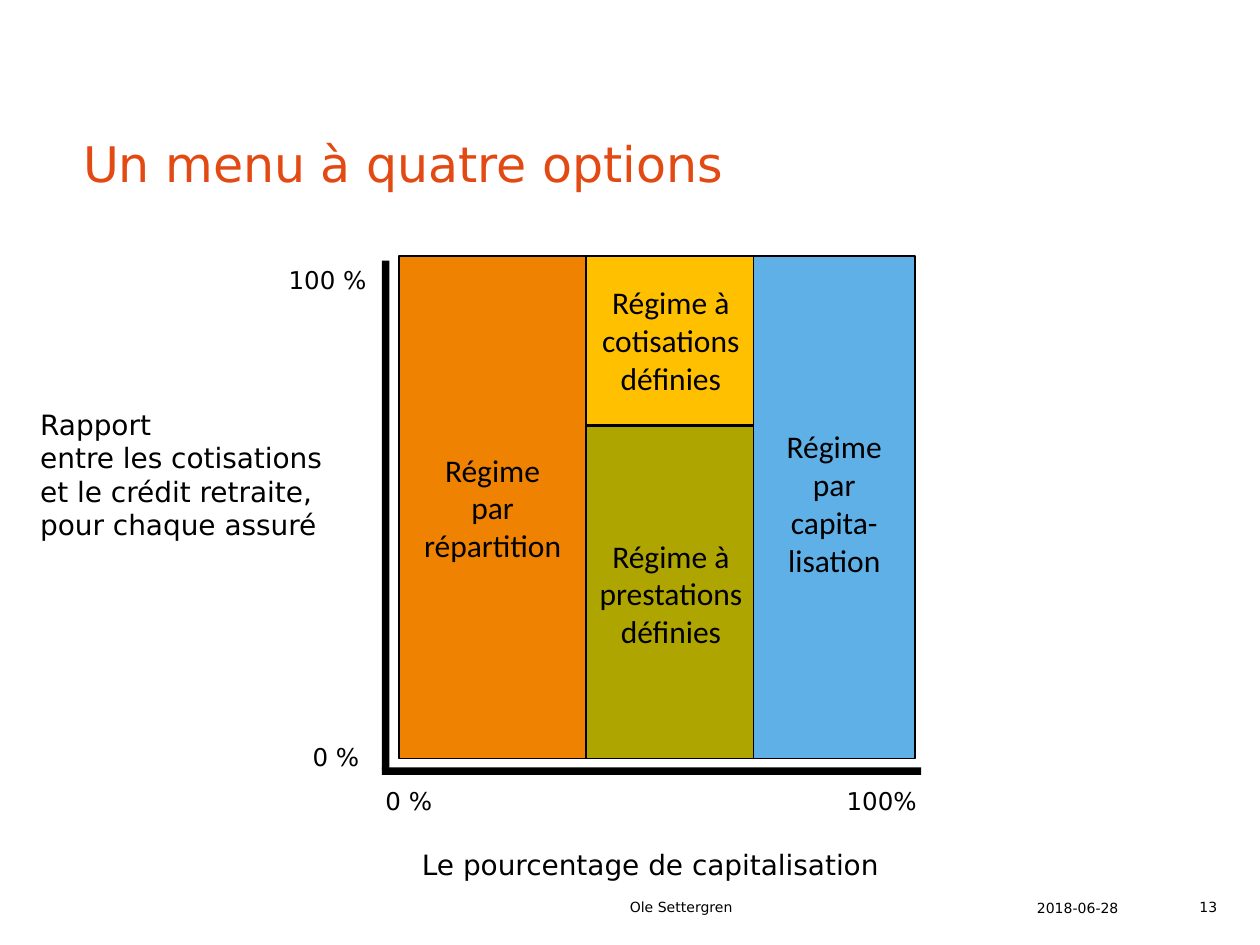
from pptx import Presentation
from pptx.dml.color import RGBColor
from pptx.enum.shapes import MSO_SHAPE as Shape
from pptx.enum.text import MSO_ANCHOR as Anchor, MSO_AUTO_SIZE as AutoSize, PP_ALIGN as Align
from pptx.util import Pt

BLACK = RGBColor(0x00, 0x00, 0x00)
TITLE_RED = RGBColor(0xE3, 0x49, 0x12)
OLIVE = RGBColor(0xAF, 0xA5, 0x00)
AMBER = RGBColor(0xFF, 0xC0, 0x00)
ORANGE = RGBColor(0xEF, 0x82, 0x00)
SKY = RGBColor(0x5E, 0xB0, 0xE6)
SANS = "DejaVu Sans"
LABEL = "Calibri"


def write(frame, lines, size, font, color=BLACK, align=Align.LEFT, anchor=Anchor.TOP):
    frame.vertical_anchor = anchor
    for index, line in enumerate(lines):
        para = frame.add_paragraph() if index else frame.paragraphs[0]
        para.alignment = align
        span = para.add_run()
        span.text = line
        span.font.size = Pt(size)
        span.font.name = font
        span.font.color.rgb = color


def add_block(left, top, width, height, color, outlined=True):
    block = slide.shapes.add_shape(Shape.RECTANGLE, Pt(left), Pt(top), Pt(width), Pt(height))
    block.shadow.inherit = False
    block.fill.solid()
    block.fill.fore_color.rgb = color
    if outlined:
        block.line.color.rgb = BLACK
        block.line.width = Pt(1)
    else:
        block.line.fill.background()
    return block


deck = Presentation()
deck.slide_width, deck.slide_height = Pt(720), Pt(540)
slide = deck.slides.add_slide(deck.slide_layouts[5])

title = slide.shapes.title
title.left, title.top, title.width, title.height = Pt(40.3), Pt(77.8), Pt(638.6), Pt(65.5)
title.text_frame.margin_bottom = Pt(33.6)
write(title.text_frame, ["Un menu à quatre options"], 28, SANS, TITLE_RED, anchor=Anchor.BOTTOM)
title.text_frame.paragraphs[0].line_spacing = Pt(30)

add_block(218.2, 149, 4.3, 290.9, BLACK, outlined=False)
add_block(218.2, 438.5, 308.2, 4.3, BLACK, outlined=False)

axis_texts = [
    (23, 232.6, 164.2, 77.8, 16, 0,
     ["Rapport", "entre les cotisations", "et le crédit retraite,", "pour chaque assuré"]),
    (178.6, 424.1, 28.8, 16.6, 14, 0, ["0 %"]),
    (164.9, 151.2, 46.8, 16.6, 14, 0, ["100 %"]),
    (220.3, 449.3, 28.8, 16.6, 14, 0, ["0 %"]),
    (483.8, 449.3, 41.8, 16.6, 14, 0, ["100%"]),
    (234, 481, 277.2, 26.6, 16, None, ["Le pourcentage de capitalisation"]),
]
for left, top, width, height, size, inset, lines in axis_texts:
    box = slide.shapes.add_textbox(Pt(left), Pt(top), Pt(width), Pt(height))
    frame = box.text_frame
    frame.word_wrap = False
    frame.auto_size = AutoSize.SHAPE_TO_FIT_TEXT
    if inset is not None:
        frame.margin_left = frame.margin_right = Pt(inset)
        frame.margin_top = frame.margin_bottom = Pt(inset)
    write(frame, lines, size, SANS)

add_block(231.8, 243.4, 290.9, 190.1, OLIVE)
add_block(229.7, 146.2, 290.9, 96.5, AMBER)
middle_labels = [
    (334.8, 303.1, 97.2, ["Régime à prestations définies"]),
    (336.2, 158.4, 94.3, ["Régime à cotisations", "définies"]),
]
for left, top, width, lines in middle_labels:
    box = slide.shapes.add_textbox(Pt(left), Pt(top), Pt(width), Pt(72.7))
    box.text_frame.word_wrap = True
    box.text_frame.auto_size = AutoSize.SHAPE_TO_FIT_TEXT
    write(box.text_frame, lines, 18, LABEL, align=Align.CENTER)

outer_columns = [
    (228.2, 106.6, ORANGE, 3.6, ["Régime", "par", "répartition"]),
    (430.6, 92.2, SKY, 8.4, ["Régime", "par", "capita-", "lisation"]),
]
for left, width, color, bottom_inset, lines in outer_columns:
    column = add_block(left, 146.2, width, 287.3, color)
    column.text_frame.word_wrap = False
    column.text_frame.margin_bottom = Pt(bottom_inset)
    write(column.text_frame, lines, 18, LABEL, align=Align.CENTER, anchor=Anchor.MIDDLE)

footers = [
    (352.8, 226.8, 17.3, "Ole Settergren", Align.LEFT, Anchor.MIDDLE),
    (585.4, 70.6, 17.3, "2018-06-28", Align.LEFT, Anchor.BOTTOM),
    (661.7, 41, 16.6, "13", Align.RIGHT, Anchor.BOTTOM),
]
for left, width, height, words, align, anchor in footers:
    box = slide.shapes.add_textbox(Pt(left), Pt(509.8), Pt(width), Pt(height))
    box.text_frame.word_wrap = True
    write(box.text_frame, [words], 8, SANS, align=align, anchor=anchor)

deck.save("out.pptx")
